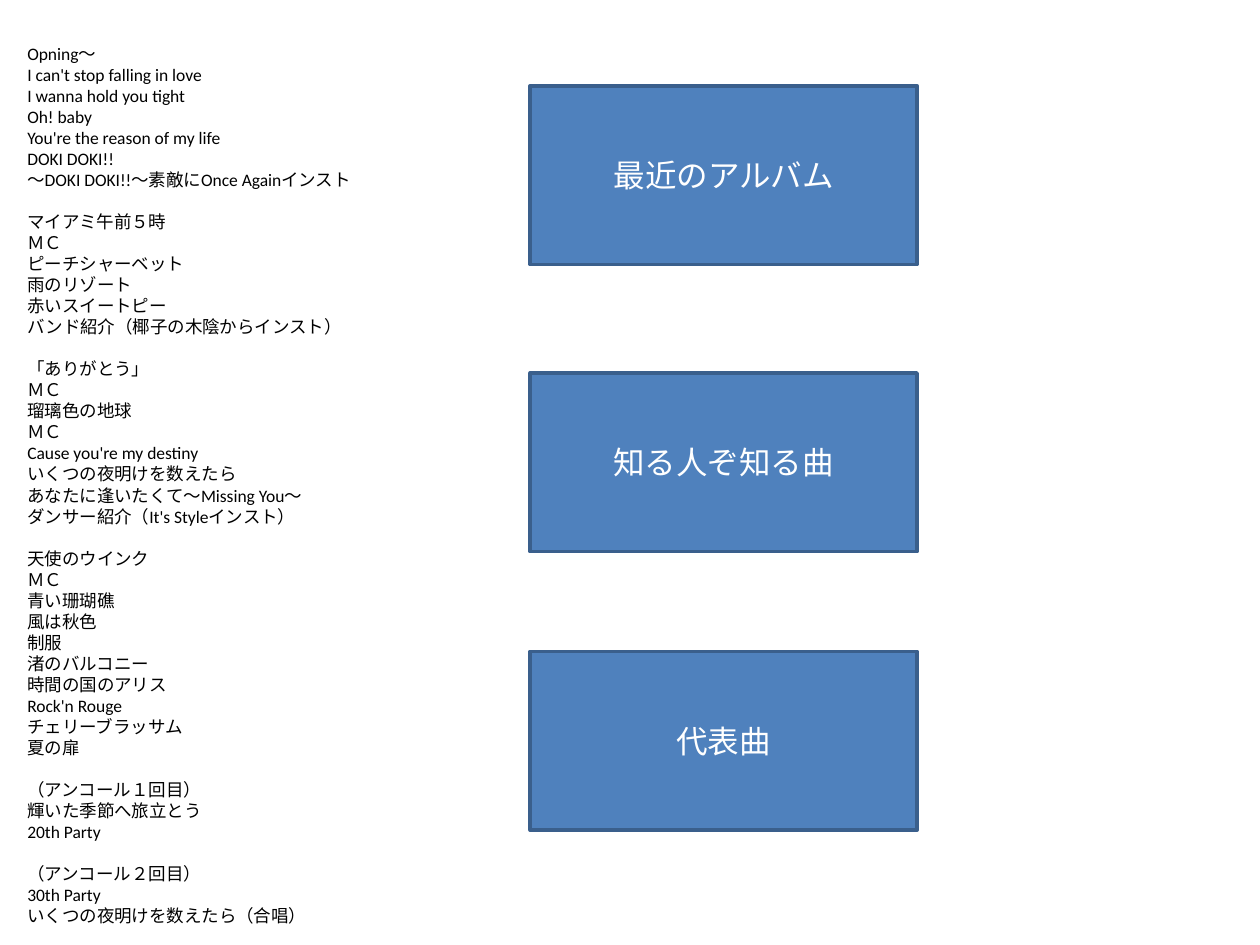
from pptx import Presentation
from pptx import util as u
from pptx.dml.color import RGBColor
from pptx.enum import shapes, text

BLACK = RGBColor(0x00, 0x00, 0x00)
WHITE = RGBColor(0xFF, 0xFF, 0xFF)
BLUE = RGBColor(0x4F, 0x81, 0xBD)
DARK_BLUE = RGBColor(0x3A, 0x5F, 0x8C)

SET_LIST = [
    ["Opning〜", "I can't stop falling in love", "I wanna hold you tight",
     "Oh! baby", "You're the reason of my life", "DOKI DOKI!!",
     "〜DOKI DOKI!!〜素敵にOnce Againインスト"],
    ["マイアミ午前５時", "ＭＣ", "ピーチシャーベット", "雨のリゾート",
     "赤いスイートピー", "バンド紹介（椰子の木陰からインスト）"],
    ["「ありがとう」", "ＭＣ", "瑠璃色の地球", "ＭＣ",
     "Cause you're my destiny", "いくつの夜明けを数えたら",
     "あなたに逢いたくて〜Missing You〜", "ダンサー紹介（It's Styleインスト）"],
    ["天使のウインク", "ＭＣ", "青い珊瑚礁", "風は秋色", "制服",
     "渚のバルコニー", "時間の国のアリス", "Rock'n Rouge",
     "チェリーブラッサム", "夏の扉"],
    ["（アンコール１回目）", "輝いた季節へ旅立とう", "20th Party"],
    ["（アンコール２回目）", "30th Party", "いくつの夜明けを数えたら（合唱）"],
]
CATEGORIES = [("最近のアルバム", 49), ("知る人ぞ知る曲", 213.1), ("代表曲", 372.2)]


class Deck:
    font = "Calibri"
    list_size = 10
    box_size = 18
    group_gap = 12

    def __init__(self, width, height):
        self.prs = Presentation()
        self.prs.slide_width = u.Pt(width)
        self.prs.slide_height = u.Pt(height)
        self.s = self.prs.slides.add_slide(self.prs.slide_layouts[6])

    def set_text(self, p, content, size, color):
        p.text = content
        for r in p.runs:
            r.font.name = self.font
            r.font.size = u.Pt(size)
            r.font.color.rgb = color

    def grouped_list(self, groups, left, top, width, height):
        sp = self.s.shapes.add_textbox(*map(u.Pt, (left, top, width, height)))
        tf = sp.text_frame
        tf.word_wrap = True
        tf.auto_size = text.MSO_AUTO_SIZE.SHAPE_TO_FIT_TEXT
        p = tf.paragraphs[0]
        for g, songs in enumerate(groups):
            for i, song in enumerate(songs):
                if g or i:
                    p = tf.add_paragraph()
                self.set_text(p, song, self.list_size, BLACK)
                if g and i == 0:
                    p.space_before = u.Pt(self.group_gap)

    def box(self, label, left, top, width, height):
        sp = self.s.shapes.add_shape(shapes.MSO_SHAPE.RECTANGLE,
                                     *map(u.Pt, (left, top, width, height)))
        sp.shadow.inherit = False
        sp.fill.solid()
        sp.fill.fore_color.rgb = BLUE
        sp.line.color.rgb = DARK_BLUE
        sp.line.width = u.Pt(2)
        tf = sp.text_frame
        tf.vertical_anchor = text.MSO_ANCHOR.MIDDLE
        p = tf.paragraphs[0]
        p.alignment = text.PP_ALIGN.CENTER
        self.set_text(p, label, self.box_size, WHITE)


def main():
    deck = Deck(720, 540)
    deck.grouped_list(SET_LIST, 8.5, 21, 533, 528.5)
    for label, top in CATEGORIES:
        deck.box(label, 303, top, 221.1, 102.2)
    deck.prs.save("out.pptx")


if __name__ == "__main__":
    main()
